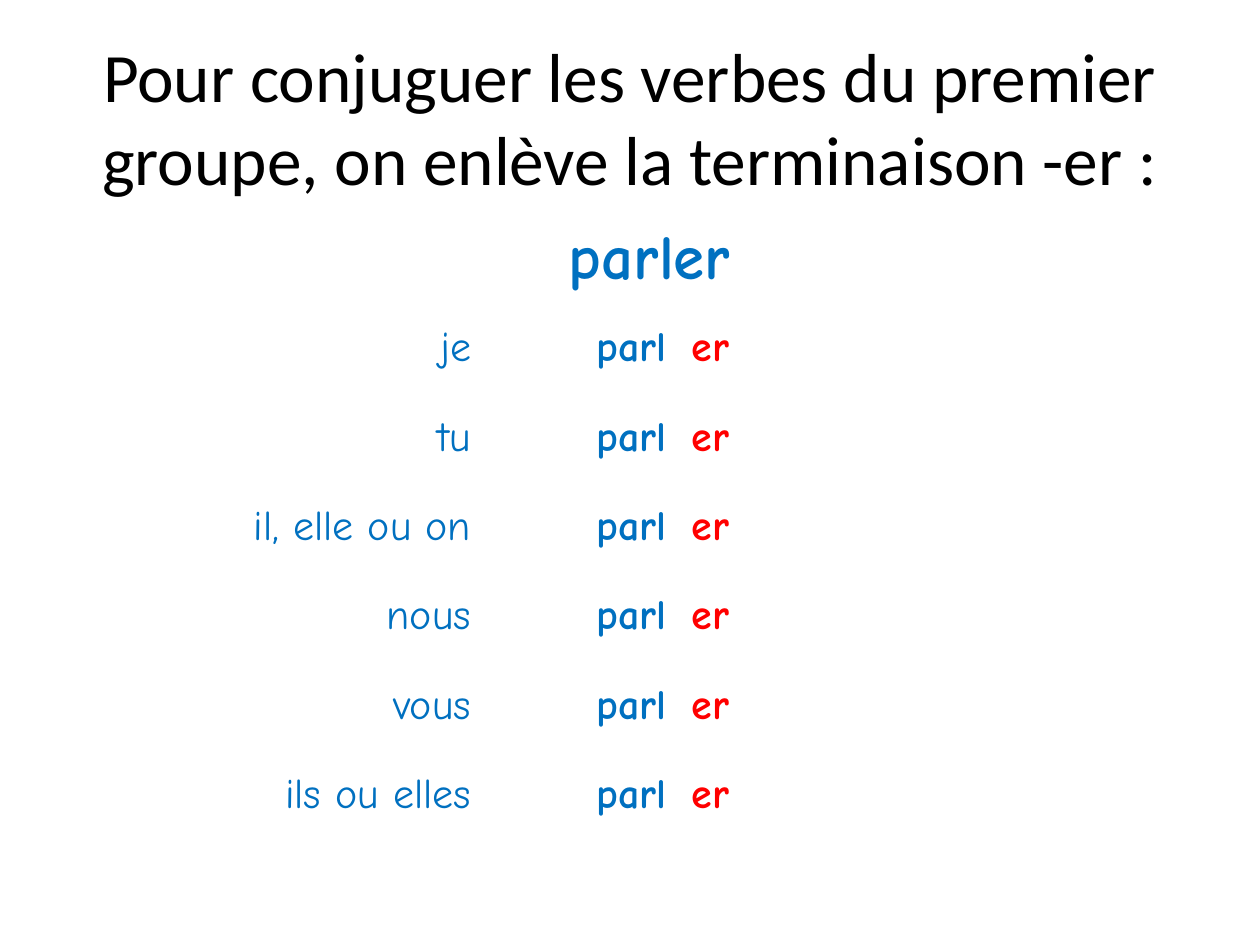
from pptx import Presentation
from pptx.dml.color import RGBColor
from pptx.enum.text import MSO_ANCHOR, PP_ALIGN
from pptx.util import Cm, Pt

BLUE, RED, BLACK, WHITE = "0070C0", "FF0000", "000000", "FFFFFF"
PRONOUNS = ["je", "tu", "il, elle ou on", "nous", "vous", "ils ou elles"]
WIDTHS = [6.65, 3.94, 9.4]
ROW = 1.8


def color(code):
    return RGBColor.from_string(code)


def write(frame, text, font, size, code, align, bold=False):
    frame.text = text
    line = frame.paragraphs[0]
    line.alignment = align
    style = line.runs[0].font
    style.name, style.size, style.bold = font, Pt(size), bold
    style.color.rgb = color(code)


def add_title(slide, left, top, width, height):
    box = slide.shapes.add_textbox(Cm(left), Cm(top), Cm(width), Cm(height))
    frame = box.text_frame
    frame.word_wrap = True
    frame.vertical_anchor = MSO_ANCHOR.MIDDLE
    write(frame, "Pour conjuguer les verbes du premier groupe, "
          "on enlève la terminaison -er :", "Calibri", 39.6, BLACK, PP_ALIGN.CENTER)


def fill_cell(cell, text, size, code, align, bold):
    cell.vertical_anchor = MSO_ANCHOR.MIDDLE
    write(cell.text_frame, text, "Comic Neue", size, code, align, bold)


def add_verb(slide, left, top):
    """Table with the infinitive on top and one row per pronoun."""
    count = len(PRONOUNS) + 1
    table = slide.shapes.add_table(count, len(WIDTHS), Cm(left), Cm(top),
                                   Cm(sum(WIDTHS)), Cm(ROW * count)).table
    table.first_row = table.horz_banding = False
    for column, width in zip(table.columns, WIDTHS):
        column.width = Cm(width)
    for cell in table.iter_cells():
        cell.fill.solid()
        cell.fill.fore_color.rgb = color(WHITE)

    head = table.cell(0, 0)
    head.merge(table.cell(0, len(WIDTHS) - 1))
    fill_cell(head, "parler", 36, BLUE, PP_ALIGN.CENTER, True)
    for row, pronoun in enumerate(PRONOUNS, 1):
        fill_cell(table.cell(row, 0), pronoun, 24, BLUE, PP_ALIGN.RIGHT, False)
        fill_cell(table.cell(row, 1), "parl", 24, BLUE, PP_ALIGN.RIGHT, True)
        fill_cell(table.cell(row, 2), "er", 24, RED, PP_ALIGN.LEFT, True)


def main():
    deck = Presentation()
    deck.slide_width, deck.slide_height = Cm(25.4), Cm(19.05)
    slide = deck.slides.add_slide(deck.slide_layouts[6])
    add_title(slide, 1.27, 0.76, 22.86, 3.18)
    add_verb(slide, 3.1, 4.32)
    deck.save("out.pptx")


if __name__ == "__main__":
    main()
